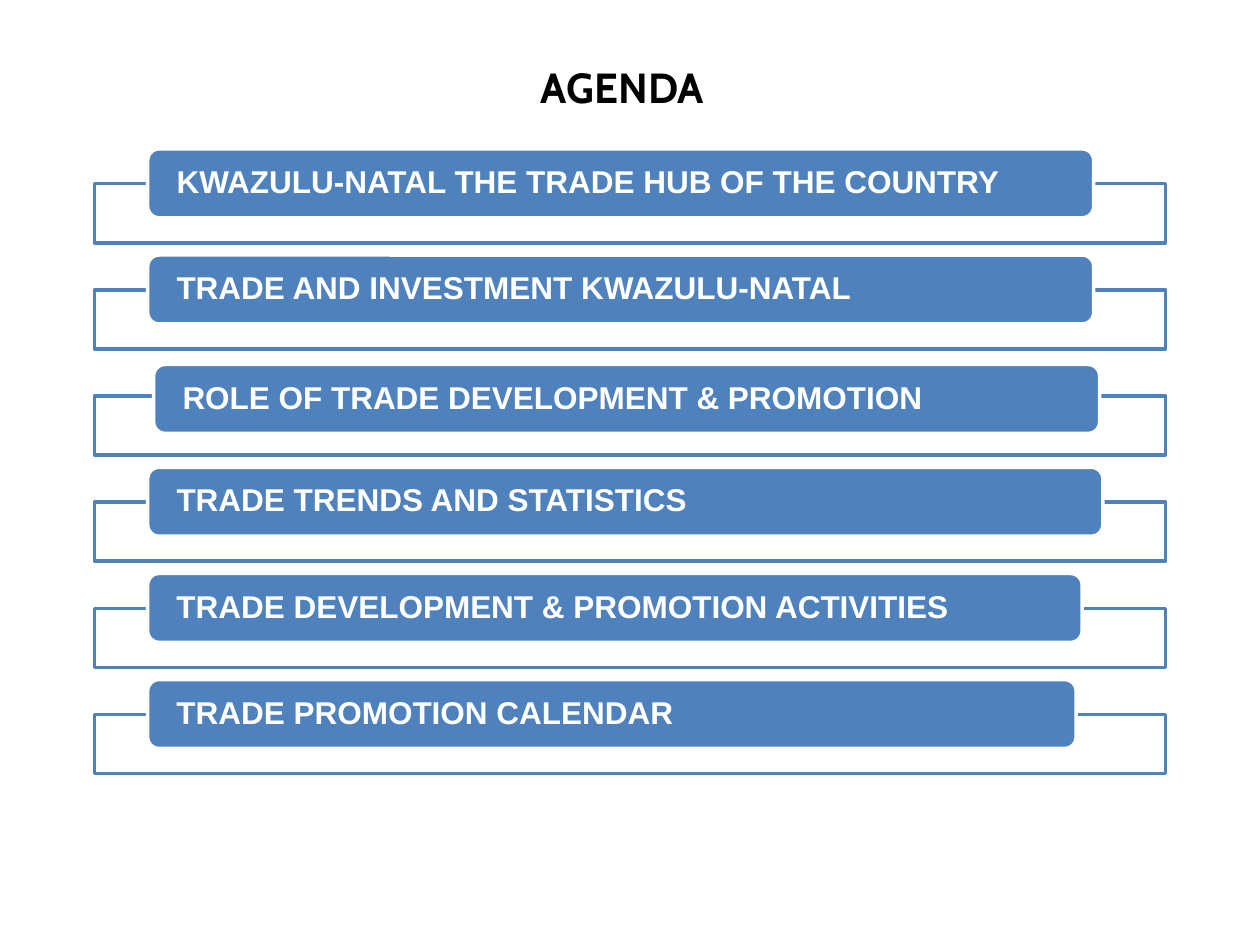
import pptx
import pptx.dml.color
import pptx.enum.shapes
import pptx.enum.text
import pptx.oxml
import pptx.oxml.ns
import pptx.util
from pptx.util import Pt

TITLE = "AGENDA"
# Label, bar width, and how far the bar is nudged right and down
AGENDA = [
    ("KWAZULU-NATAL THE TRADE HUB OF THE COUNTRY", 540.6, 0, 0),
    ("TRADE AND INVESTMENT KWAZULU-NATAL", 540.6, 0, 0),
    ("ROLE OF TRADE DEVELOPMENT & PROMOTION", 540.6, 3.4, 1.9),
    ("TRADE TRENDS AND STATISTICS", 545.8, 0, 0),
    ("TRADE DEVELOPMENT & PROMOTION ACTIVITIES", 534, 0, 0),
    ("TRADE PROMOTION CALENDAR", 530.6, 0, 0),
]
THEME = {
    "accent": "4F81BD", "light": "FFFFFF", "dark": "000000",
    "title_font": "Cabin", "title_size": 24,
    "label_font": "Arial", "label_size": 18, "line": 2,
}
ROW_PITCH = 60.65
FRAME_LEFT, FRAME_TOP, FRAME_WIDTH, FRAME_HEIGHT = 54, 105, 612, 33.8
BAR_LEFT, BAR_TOP, BAR_HEIGHT = 84.4, 85.1, 39.4
BAR_INSET = 14.6
SHAPES = pptx.enum.shapes.MSO_SHAPE


def color(name):
    return pptx.dml.color.RGBColor.from_string(THEME[name])


def add_box(slide, kind, left, top, width, height, fill, line):
    shape = slide.shapes.add_shape(kind, Pt(left), Pt(top), Pt(width), Pt(height))
    shape.shadow.inherit = False
    shape.fill.solid()
    shape.fill.fore_color.rgb = color(fill)
    shape.line.color.rgb = color(line)
    shape.line.width = Pt(THEME["line"])
    return shape


def set_opacity(shape, percent):
    fill = shape.element.spPr.find(pptx.oxml.ns.qn("a:solidFill"))
    alpha = pptx.oxml.parse_xml(
        f'<a:alpha {pptx.oxml.ns.nsdecls("a")} val="{percent * 1000}"/>')
    fill[0].append(alpha)


def write(paragraph, text, style, ink, alignment):
    paragraph.text = text
    paragraph.alignment = alignment
    paragraph.font.name = THEME[f"{style}_font"]
    paragraph.font.size = Pt(THEME[f"{style}_size"])
    paragraph.font.bold = True
    paragraph.font.color.rgb = color(ink)


def add_title(slide):
    frame = slide.shapes.add_textbox(Pt(0), Pt(31.7), Pt(711.4), Pt(36.7)).text_frame
    frame.word_wrap = True
    frame.auto_size = pptx.enum.text.MSO_AUTO_SIZE.SHAPE_TO_FIT_TEXT
    write(frame.paragraphs[0], TITLE, "title", "dark", pptx.enum.text.PP_ALIGN.CENTER)


def add_agenda_row(slide, index, label, width, shift_right, shift_down):
    offset = index * ROW_PITCH
    frame = add_box(slide, SHAPES.RECTANGLE, FRAME_LEFT, FRAME_TOP + offset,
                    FRAME_WIDTH, FRAME_HEIGHT, "light", "accent")
    set_opacity(frame, 90)
    bar = add_box(slide, SHAPES.ROUNDED_RECTANGLE, BAR_LEFT + shift_right,
                  BAR_TOP + offset + shift_down, width, BAR_HEIGHT, "accent", "light")
    text = bar.text_frame
    text.word_wrap = True
    text.vertical_anchor = pptx.enum.text.MSO_ANCHOR.MIDDLE
    text.margin_left = text.margin_right = Pt(BAR_INSET)
    text.margin_top = text.margin_bottom = 0
    text.paragraphs[0].line_spacing = 0.9
    write(text.paragraphs[0], label, "label", "light", pptx.enum.text.PP_ALIGN.LEFT)


def main():
    presentation = pptx.Presentation()
    presentation.slide_width, presentation.slide_height = Pt(720), Pt(540)
    slide = presentation.slides.add_slide(presentation.slide_layouts[6])
    add_title(slide)
    for index, row in enumerate(AGENDA):
        add_agenda_row(slide, index, *row)
    presentation.save("out.pptx")


if __name__ == "__main__":
    main()
